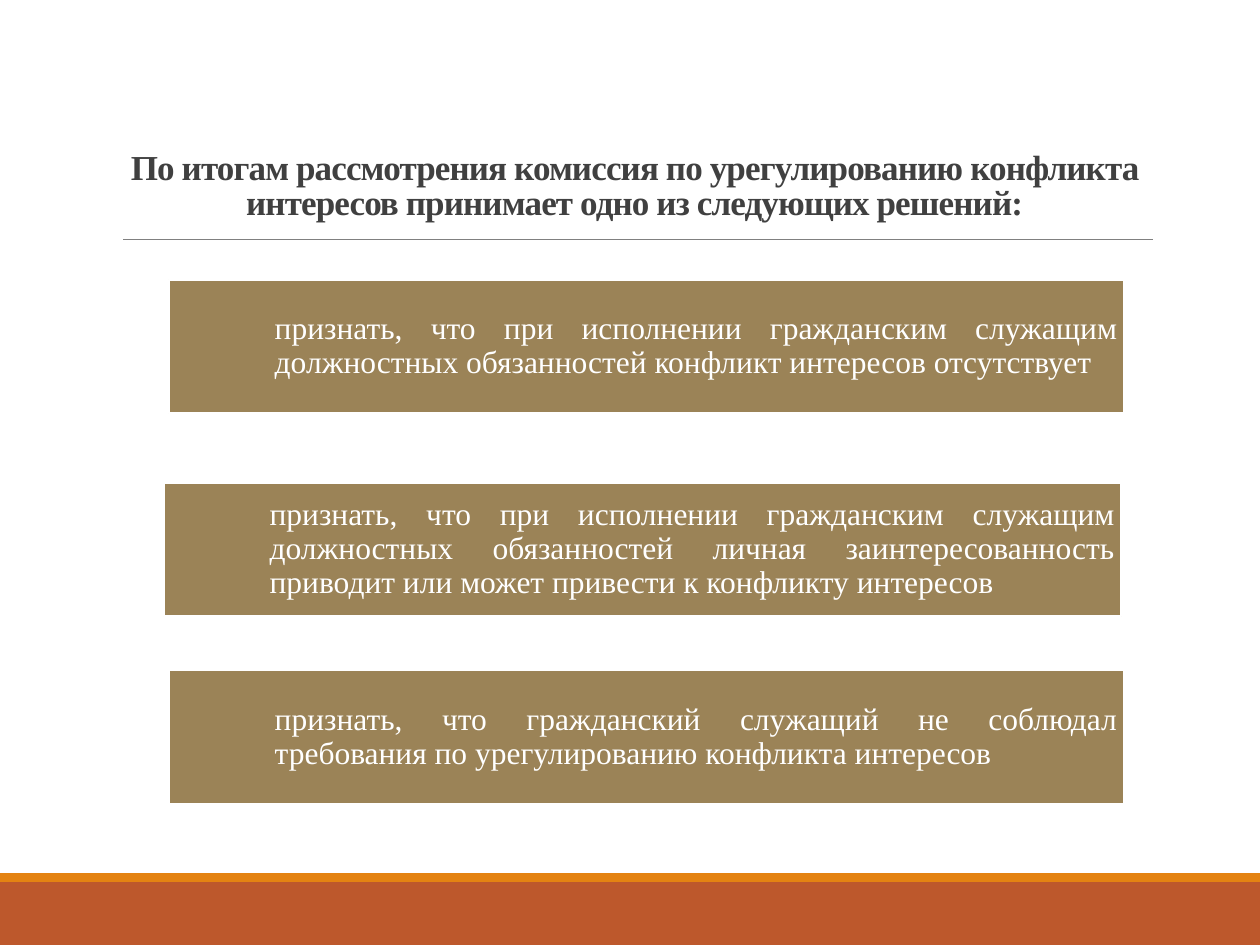
import pptx
import pptx.util
import pptx.dml.color
import pptx.enum.shapes
import pptx.enum.text
from dataclasses import dataclass

Inches = pptx.util.Inches
Pt = pptx.util.Pt
RGB = pptx.dml.color.RGBColor.from_string
ALIGN = pptx.enum.text.PP_ALIGN
ANCHOR = pptx.enum.text.MSO_ANCHOR


@dataclass
class Theme:
    font: str = "Times New Roman"
    title_size: int = 20
    body_size: int = 18
    title: str = "404040"
    white: str = "FFFFFF"
    card: str = "9B8357"
    rule: str = "808080"
    footer: str = "BD582C"
    stripe: str = "E48312"


theme = Theme()


def add_rect(slide, left, top, width, height, fill):
    sp = slide.shapes.add_shape(
        pptx.enum.shapes.MSO_SHAPE.RECTANGLE,
        Inches(left), Inches(top), Inches(width), Inches(height))
    sp.shadow.inherit = False
    sp.fill.solid()
    sp.fill.fore_color.rgb = RGB(fill)
    sp.line.fill.background()
    return sp


def write_text(sp, text, size, color, align, anchor, spacing):
    tf = sp.text_frame
    tf.word_wrap = True
    tf.vertical_anchor = anchor
    p = tf.paragraphs[0]
    p.alignment = align
    p.line_spacing = spacing
    p.font.name = theme.font
    p.font.size = Pt(size)
    p.font.color.rgb = RGB(color)
    r = p.add_run()
    r.text = text
    return p


prs = pptx.Presentation()
prs.slide_width = Inches(10)
prs.slide_height = Inches(7.5)
s = prs.slides.add_slide(prs.slide_layouts[6])

add_rect(s, 0, 7, 10, 0.5, theme.footer)
add_rect(s, 0, 6.93, 10, 0.07, theme.stripe)

rule = s.shapes.add_connector(
    pptx.enum.shapes.MSO_CONNECTOR.STRAIGHT,
    Inches(0.98), Inches(1.9), Inches(9.15), Inches(1.9))
rule.line.color.rgb = RGB(theme.rule)
rule.line.width = Pt(0.5)
rule._element.spPr.append(pptx.oxml.xmlchemy.OxmlElement("a:effectLst"))

title = s.shapes.add_textbox(Inches(0.91), Inches(1.07), Inches(8.25), Inches(0.75))
p = write_text(
    title,
    "По итогам рассмотрения комиссия по урегулированию конфликта "
    "интересов принимает одно из следующих решений:",
    theme.title_size, theme.title, ALIGN.CENTER, ANCHOR.BOTTOM, 0.85)
p.font.bold = True
p.runs[0].font._element.set("spc", "-50")

decisions = [
    (1.34, 2.22, 7.58,
     "признать, что при исполнении гражданским служащим "
     "должностных обязанностей конфликт интересов отсутствует"),
    (1.3, 3.83, 7.6,
     "признать, что при исполнении гражданским служащим "
     "должностных обязанностей личная заинтересованность "
     "приводит или может привести к конфликту интересов"),
    (1.34, 5.32, 7.58,
     "признать, что гражданский служащий не соблюдал "
     "требования по урегулированию конфликта интересов"),
]
for left, top, width, text in decisions:
    sp = add_rect(s, left, top, width, 1.06, theme.card)
    sp.line.color.rgb = RGB(theme.white)
    sp.line.width = Pt(1.25)
    tf = sp.text_frame
    tf.margin_left = Inches(0.84)
    tf.margin_right = tf.margin_top = tf.margin_bottom = Inches(0.05)
    write_text(sp, text, theme.body_size, theme.white,
               ALIGN.JUSTIFY, ANCHOR.MIDDLE, 0.9)

prs.save("out.pptx")
